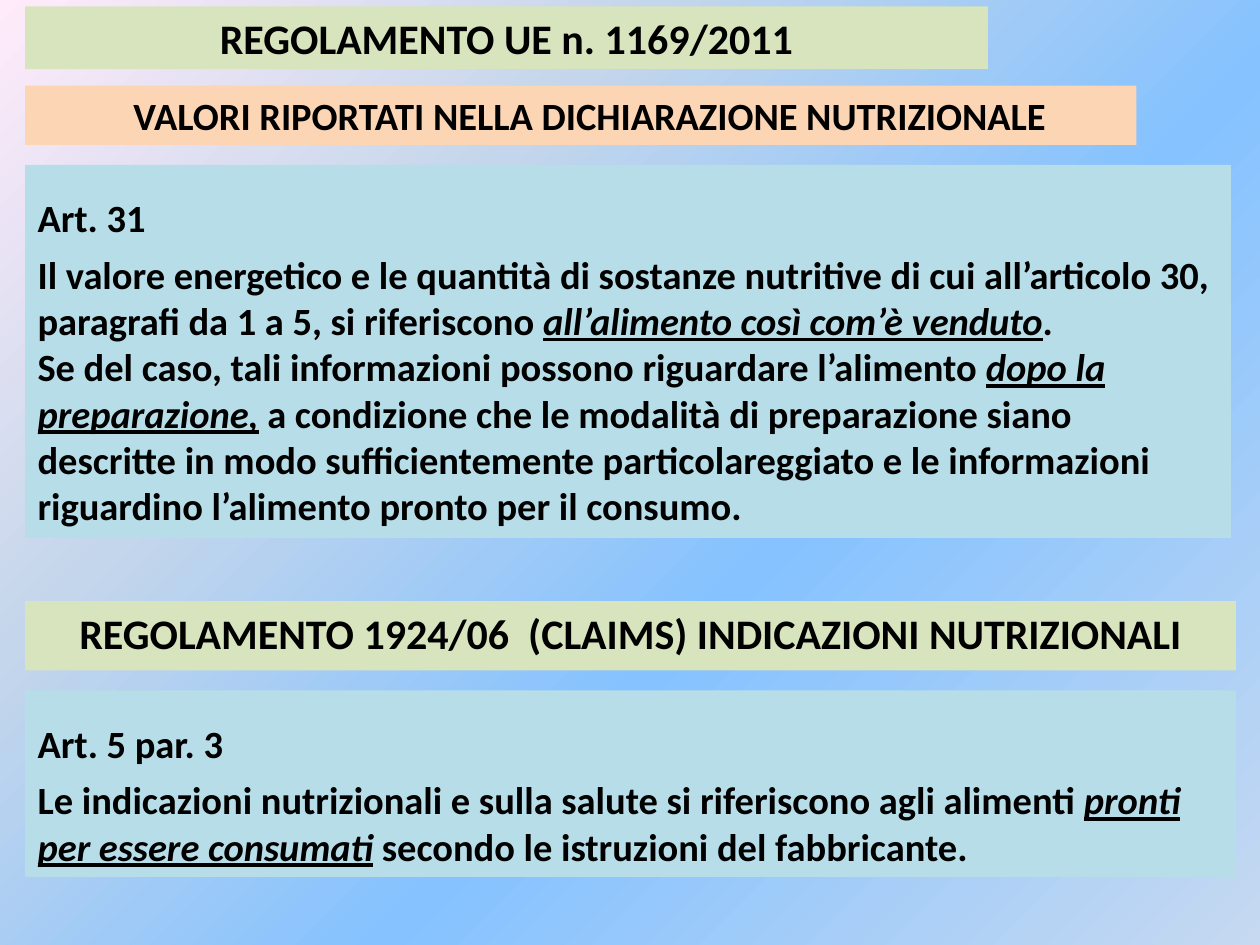
from dataclasses import dataclass

import pptx
import pptx.dml.color
import pptx.enum.text
import pptx.oxml
import pptx.oxml.ns
import pptx.util

EMU_PER_PX = 9144
LEFT = 20


@dataclass(frozen=True)
class Theme:
    font: str = "Calibri"
    text: str = "000000"
    green: str = "D7E4BD"
    peach: str = "FCD5B5"
    aqua: str = "B7DEE8"
    title_pt: int = 24
    body_pt: int = 22
    gradient: tuple[tuple[int, str, int], ...] = (
        (0, "C6D9F1", 36),
        (40, "85C2FF", 100),
        (70, "C4D6EB", 100),
        (100, "FFEBFA", 100),
    )


@dataclass(frozen=True)
class Span:
    text: str
    stressed: bool = False


@dataclass(frozen=True)
class Heading:
    text: str
    top: int
    width: int
    height: int
    color: str
    size_pt: int
    extra_inset: int = 0


@dataclass(frozen=True)
class Article:
    label: str
    top: int
    width: int
    height: int
    clauses: tuple[tuple[Span, ...], ...]


THEME = Theme()

HEADINGS = (
    Heading("REGOLAMENTO UE n. 1169/2011", 5, 764, 50, THEME.green, THEME.title_pt),
    Heading("VALORI RIPORTATI NELLA DICHIARAZIONE NUTRIZIONALE",
            68, 882, 47, THEME.peach, THEME.body_pt, extra_inset=14),
    Heading("REGOLAMENTO 1924/06  (CLAIMS) INDICAZIONI NUTRIZIONALI",
            477, 961, 55, THEME.green, THEME.title_pt),
)

ARTICLES = (
    Article("Art. 31", 131, 957, 296, (
        (
            Span("Il valore energetico e le quantità di sostanze nutritive di cui "
                 "all’articolo 30, paragrafi da 1 a 5, si riferiscono "),
            Span("all’alimento così com’è venduto", stressed=True),
            Span("."),
        ),
        (
            Span("Se del caso, tali informazioni possono riguardare l’alimento "),
            Span("dopo la preparazione,", stressed=True),
            Span(" a condizione che le modalità di preparazione siano descritte in "
                 "modo sufficientemente particolareggiato e le informazioni "
                 "riguardino l’alimento pronto per il consumo."),
        ),
    )),
    Article("Art. 5 par. 3", 548, 961, 148, (
        (
            Span("Le indicazioni nutrizionali e sulla salute si riferiscono agli alimenti "),
            Span("pronti per essere consumati", stressed=True),
            Span(" secondo le istruzioni del fabbricante."),
        ),
    )),
)


def px(length: int) -> pptx.util.Emu:
    return pptx.util.Emu(length * EMU_PER_PX)


def paint_background(slide) -> None:
    stops = "".join(
        f'<a:gs pos="{position * 1000}"><a:srgbClr val="{color}">'
        f'<a:alpha val="{opacity * 1000}"/></a:srgbClr></a:gs>'
        for position, color, opacity in THEME.gradient
    )
    background = pptx.oxml.parse_xml(
        f'<p:bg {pptx.oxml.ns.nsdecls("p", "a")}><p:bgPr>'
        f'<a:gradFill rotWithShape="1"><a:gsLst>{stops}</a:gsLst>'
        '<a:path path="circle"><a:fillToRect l="100000" t="100000"/></a:path>'
        '<a:tileRect r="-100000" b="-100000"/></a:gradFill>'
        '<a:effectLst/></p:bgPr></p:bg>'
    )
    slide.element.cSld.insert(0, background)


def add_panel(slide, top: int, width: int, height: int, color: str):
    panel = slide.shapes.add_textbox(px(LEFT), px(top), px(width), px(height))
    panel.fill.solid()
    panel.fill.fore_color.rgb = pptx.dml.color.RGBColor.from_string(color)
    panel.text_frame.word_wrap = True
    panel.text_frame.auto_size = pptx.enum.text.MSO_AUTO_SIZE.SHAPE_TO_FIT_TEXT
    return panel.text_frame


def write_spans(paragraph, spans: tuple[Span, ...], size_pt: int) -> None:
    paragraph.font.name = THEME.font
    paragraph.font.size = pptx.util.Pt(size_pt)
    paragraph.font.bold = True
    paragraph.font.color.rgb = pptx.dml.color.RGBColor.from_string(THEME.text)
    for span in spans:
        run = paragraph.add_run()
        run.text = span.text
        if span.stressed:
            run.font.italic = True
            run.font.underline = True


def draw_heading(slide, heading: Heading) -> None:
    frame = add_panel(slide, heading.top, heading.width, heading.height, heading.color)
    frame.margin_left += px(heading.extra_inset)
    title = frame.paragraphs[0]
    title.alignment = pptx.enum.text.PP_ALIGN.CENTER
    write_spans(title, (Span(heading.text),), heading.size_pt)


def draw_article(slide, article: Article) -> None:
    frame = add_panel(slide, article.top, article.width, article.height, THEME.aqua)
    label = frame.paragraphs[0]
    label.line_spacing = 1.5
    label.space_after = pptx.util.Pt(6)
    write_spans(label, (Span(article.label),), THEME.body_pt)
    for clause in article.clauses:
        write_spans(frame.add_paragraph(), clause, THEME.body_pt)


def main() -> None:
    deck = pptx.Presentation()
    deck.slide_width, deck.slide_height = px(1000), px(750)
    slide = deck.slides.add_slide(deck.slide_layouts[6])
    paint_background(slide)
    for heading in HEADINGS:
        draw_heading(slide, heading)
    for article in ARTICLES:
        draw_article(slide, article)
    deck.save("out.pptx")


if __name__ == "__main__":
    main()
